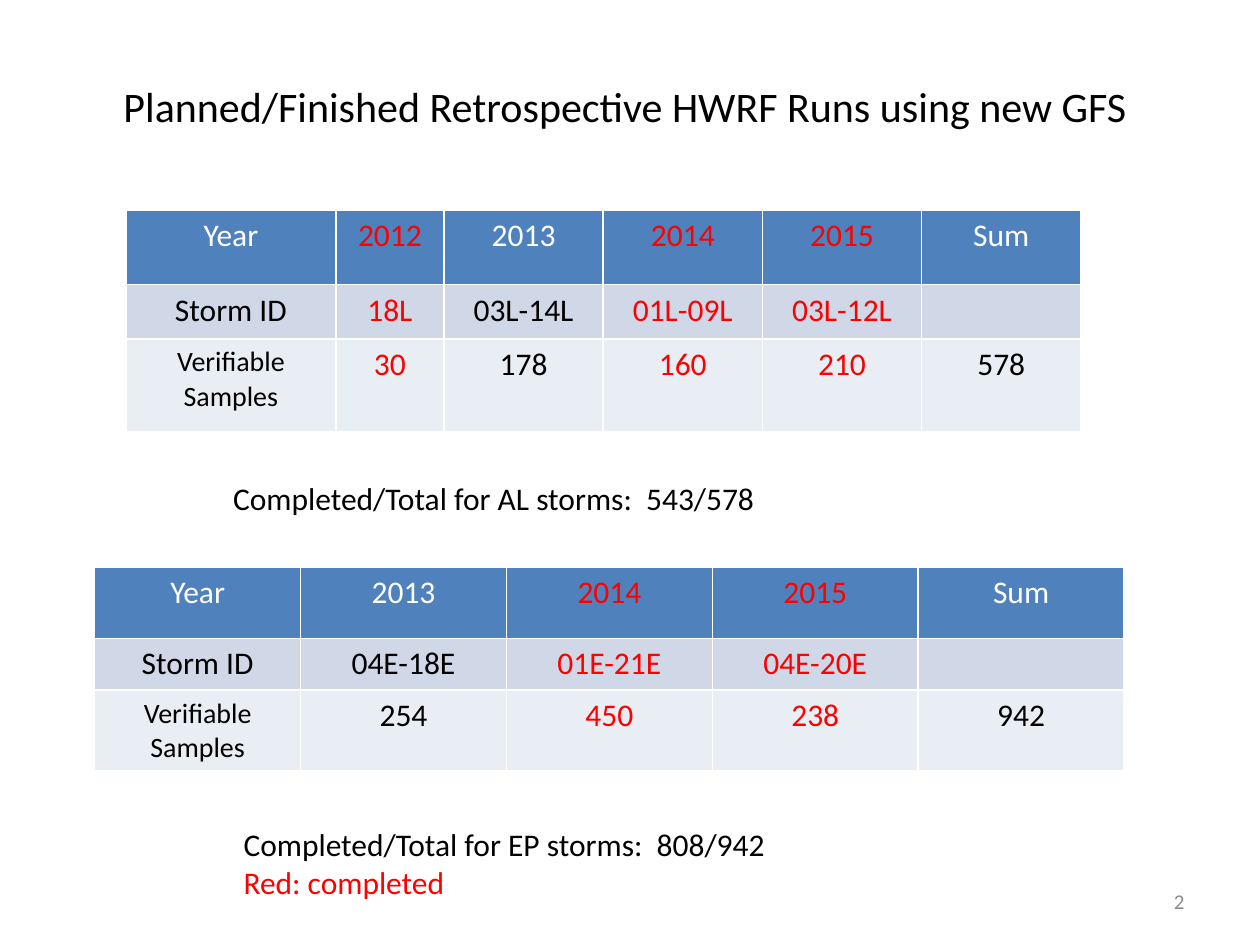
"""Build the slide on planned and finished retrospective HWRF runs."""
from dataclasses import dataclass

from pptx import Presentation
from pptx.dml.color import RGBColor
from pptx.enum.text import MSO_ANCHOR, PP_ALIGN
from pptx.util import Cm, Pt


@dataclass(frozen=True)
class Theme:
    font: str = "Calibri"
    ink: str = "000000"
    completed: str = "FF0000"
    header_ink: str = "FFFFFF"
    page_ink: str = "8C8C8C"
    row_fills: tuple = ("4F81BD", "D0D8E8", "E9EDF4")
    title_size: int = 24
    body_size: int = 18
    label_size: int = 16
    page_size: int = 12


THEME = Theme()
ROW_LABELS = ("Year", "Storm ID", "Verifiable Samples")
COMPLETED_YEARS = ("2012", "2014", "2015")

BASINS = [
    {
        "years": [("2012", "18L", "30"), ("2013", "03L-14L", "178"),
                  ("2014", "01L-09L", "160"), ("2015", "03L-12L", "210")],
        "sum": "578",
        "corner": (2.54, 4.24),
        "widths": (4.23, 2.18, 3.21, 3.21, 3.21, 3.21),
        "heights": (1.5, 1.09, 1.87),
    },
    {
        "years": [("2013", "04E-18E", "254"), ("2014", "01E-21E", "450"),
                  ("2015", "04E-20E", "238")],
        "sum": "942",
        "corner": (1.91, 11.43),
        "widths": (4.15,) * 5,
        "heights": (1.44, 1.04, 1.62),
    },
]

TITLE = "Planned/Finished Retrospective HWRF Runs using new GFS"
ATLANTIC_STATUS = "Completed/Total for AL storms:  543/578"
PACIFIC_STATUS = "Completed/Total for EP storms:  808/942"
LEGEND = "Red: completed"
PAGE_NUMBER = "2"


def write(paragraph, text, *, size=THEME.body_size, color=THEME.ink, align=PP_ALIGN.LEFT):
    paragraph.alignment = align
    run = paragraph.add_run()
    run.text = text
    run.font.name = THEME.font
    run.font.size = Pt(size)
    run.font.color.rgb = RGBColor.from_string(color)


def add_frame(slide, left, top, width, height):
    frame = slide.shapes.add_textbox(Cm(left), Cm(top), Cm(width), Cm(height)).text_frame
    frame.word_wrap = True
    return frame


def cell_color(row, year):
    if year in COMPLETED_YEARS:
        return THEME.completed
    return THEME.ink if row else THEME.header_ink


def add_basin(slide, basin):
    columns = [ROW_LABELS, *basin["years"], ("Sum", "", basin["sum"])]
    widths, heights = basin["widths"], basin["heights"]
    left, top = basin["corner"]
    grid = slide.shapes.add_table(
        len(heights), len(columns), Cm(left), Cm(top), Cm(sum(widths)), Cm(sum(heights))
    ).table
    for row, height in enumerate(heights):
        grid.rows[row].height = Cm(height)
    for col, (entries, width) in enumerate(zip(columns, widths)):
        grid.columns[col].width = Cm(width)
        for row, entry in enumerate(entries):
            cell = grid.cell(row, col)
            cell.fill.solid()
            cell.fill.fore_color.rgb = RGBColor.from_string(THEME.row_fills[row])
            if entry:
                size = THEME.label_size if entry == ROW_LABELS[-1] else THEME.body_size
                write(cell.text_frame.paragraphs[0], entry, size=size,
                      color=cell_color(row, entries[0]), align=PP_ALIGN.CENTER)
                cell.text_frame.paragraphs[0].runs[0].font.bold = False


def main():
    deck = Presentation()
    deck.slide_width, deck.slide_height = Cm(25.4), Cm(19.05)
    slide = deck.slides.add_slide(deck.slide_layouts[6])

    for basin in BASINS:
        add_basin(slide, basin)

    title = add_frame(slide, 1.27, 1.5, 22.66, 1.28)
    write(title.paragraphs[0], TITLE, size=THEME.title_size, align=PP_ALIGN.CENTER)

    atlantic = add_frame(slide, 4.45, 9.53, 14.82, 1.03)
    write(atlantic.paragraphs[0], ATLANTIC_STATUS)

    pacific = add_frame(slide, 4.66, 16.51, 19.26, 1.8)
    write(pacific.paragraphs[0], PACIFIC_STATUS)
    write(pacific.add_paragraph(), LEGEND, color=THEME.completed)

    page = add_frame(slide, 18.2, 17.66, 5.93, 1.01)
    page.vertical_anchor = MSO_ANCHOR.MIDDLE
    write(page.paragraphs[0], PAGE_NUMBER, size=THEME.page_size,
          color=THEME.page_ink, align=PP_ALIGN.RIGHT)

    deck.save("out.pptx")


if __name__ == "__main__":
    main()
